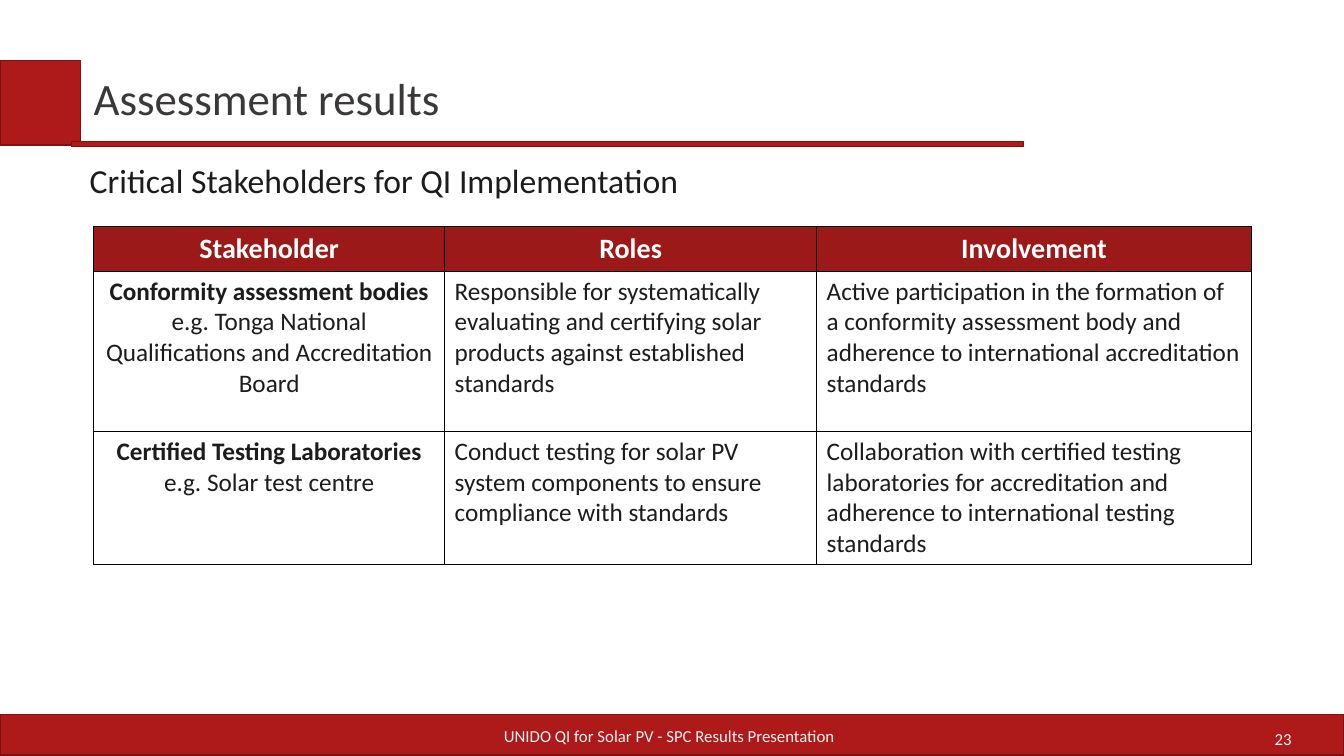
from pptx import Presentation
from pptx.dml.color import RGBColor
from pptx.enum.shapes import MSO_SHAPE
from pptx.enum.text import MSO_ANCHOR, PP_ALIGN
from pptx.oxml import parse_xml
from pptx.oxml.ns import nsdecls
from pptx.util import Inches, Pt

TITLE = "Assessment results"
SUBTITLE = "Critical Stakeholders for QI Implementation"
FOOTER = "UNIDO QI for Solar PV - SPC Results Presentation"
PAGE_NUMBER = "23"
HEADINGS = ["Stakeholder", "Roles", "Involvement"]
# (stakeholder, example), role, involvement
STAKEHOLDERS = [
    (("Conformity assessment bodies",
      " e.g. Tonga National Qualifications and Accreditation Board"),
     "Responsible for systematically evaluating and certifying solar products "
     "against established standards",
     "Active participation in the formation of a conformity assessment body and "
     "adherence to international accreditation standards"),
    (("Certified Testing Laboratories", " e.g. Solar test centre"),
     "Conduct testing for solar PV system components to ensure compliance with standards",
     "Collaboration with certified testing laboratories for accreditation and "
     "adherence to international testing standards"),
]

FONT = "Calibri"
COLORS = {
    "band": "AE1919", "band_line": "7E1212", "header": "9B1919", "white": "FFFFFF",
    "footer": "F2F2F2", "title": "3A3838", "text": "1D1C1C", "grid": "000000",
}
WIDTH, HEIGHT = 13.33, 7.5
BANDS = [(0, 7.09, WIDTH, 0.4), (0, 0.6, 0.8, 0.84), (0.71, 1.4, 9.44, 0.05)]
TABLE_LEFT, TABLE_TOP = 0.93, 2.25
COLUMN_WIDTHS = [3.48, 3.69, 4.31]
ROW_HEIGHTS = [0.44, 1.59, 1.32]


def color(name):
    return RGBColor.from_string(COLORS[name])


def write(frame, *texts, size, ink, bold=(False,), align=PP_ALIGN.LEFT, line_spacing=None):
    """Fill the first paragraph with one run per text; bold has one flag per run."""
    para = frame.paragraphs[0]
    para.alignment = align
    para.line_spacing = line_spacing
    for text, is_bold in zip(texts, bold):
        span = para.add_run()
        span.text = text
        span.font.name = FONT
        span.font.size = Pt(size)
        span.font.bold = is_bold
        span.font.color.rgb = color(ink)


def add_text(page, text, place, inset, inset_y=None, anchor=MSO_ANCHOR.MIDDLE, **style):
    frame = page.shapes.add_textbox(*map(Inches, place)).text_frame
    frame.word_wrap = True
    frame.vertical_anchor = anchor
    frame.margin_left = frame.margin_right = Inches(inset)
    frame.margin_top = frame.margin_bottom = Inches(inset_y or inset)
    write(frame, text, **style)


def add_band(page, place):
    band = page.shapes.add_shape(MSO_SHAPE.RECTANGLE, *map(Inches, place))
    band.shadow.inherit = False
    band.fill.solid()
    band.fill.fore_color.rgb = color("band")
    band.line.color.rgb = color("band_line")
    band.line.width = Pt(0.85)


def add_borders(cell):
    properties = cell._tc.get_or_add_tcPr()
    for position, side in enumerate(("lnL", "lnR", "lnT", "lnB")):
        properties.insert(position, parse_xml(
            f'<a:{side} {nsdecls("a")} w="{Pt(0.75)}"><a:solidFill>'
            f'<a:srgbClr val="{COLORS["grid"]}"/></a:solidFill></a:{side}>'))


def add_stakeholder_table(page):
    rows = [HEADINGS, *STAKEHOLDERS]
    table = page.shapes.add_table(
        len(rows), len(HEADINGS), Inches(TABLE_LEFT), Inches(TABLE_TOP),
        Inches(sum(COLUMN_WIDTHS)), Inches(sum(ROW_HEIGHTS))).table
    table.horz_banding = False
    for column, width in zip(table.columns, COLUMN_WIDTHS):
        column.width = Inches(width)
    for row_index, (row, height) in enumerate(zip(rows, ROW_HEIGHTS)):
        table.rows[row_index].height = Inches(height)
        is_header = row_index == 0
        for column_index, content in enumerate(row):
            cell = table.cell(row_index, column_index)
            cell.fill.solid()
            cell.fill.fore_color.rgb = color("header" if is_header else "white")
            cell.vertical_anchor = MSO_ANCHOR.MIDDLE if is_header else MSO_ANCHOR.TOP
            add_borders(cell)
            if is_header:
                write(cell.text_frame, content, size=20, ink="white", bold=(True,),
                      align=PP_ALIGN.CENTER)
            elif column_index == 0:
                write(cell.text_frame, *content, size=18, ink="text", bold=(True, False),
                      align=PP_ALIGN.CENTER)
            else:
                write(cell.text_frame, content, size=18, ink="text")


def main():
    deck = Presentation()
    deck.slide_width, deck.slide_height = Inches(WIDTH), Inches(HEIGHT)
    page = deck.slides.add_slide(deck.slide_layouts[6])
    for place in BANDS:
        add_band(page, place)
    add_text(page, PAGE_NUMBER, (9.77, 7.13, 3.14, 0.4), 0.1, inset_y=0.05,
             size=12, ink="footer", align=PP_ALIGN.RIGHT)
    add_text(page, FOOTER, (3.61, 7.1, 6.06, 0.4), 0.1,
             size=12, ink="footer", align=PP_ALIGN.CENTER)
    add_stakeholder_table(page)
    add_text(page, SUBTITLE, (0.76, 1.46, 8.41, 1.1), 0.13, anchor=MSO_ANCHOR.TOP,
             size=24, ink="text")
    add_text(page, TITLE, (0.83, 0.63, 8.38, 0.75), 0.1,
             size=32, ink="title", line_spacing=0.9)
    deck.save("out.pptx")


if __name__ == "__main__":
    main()
